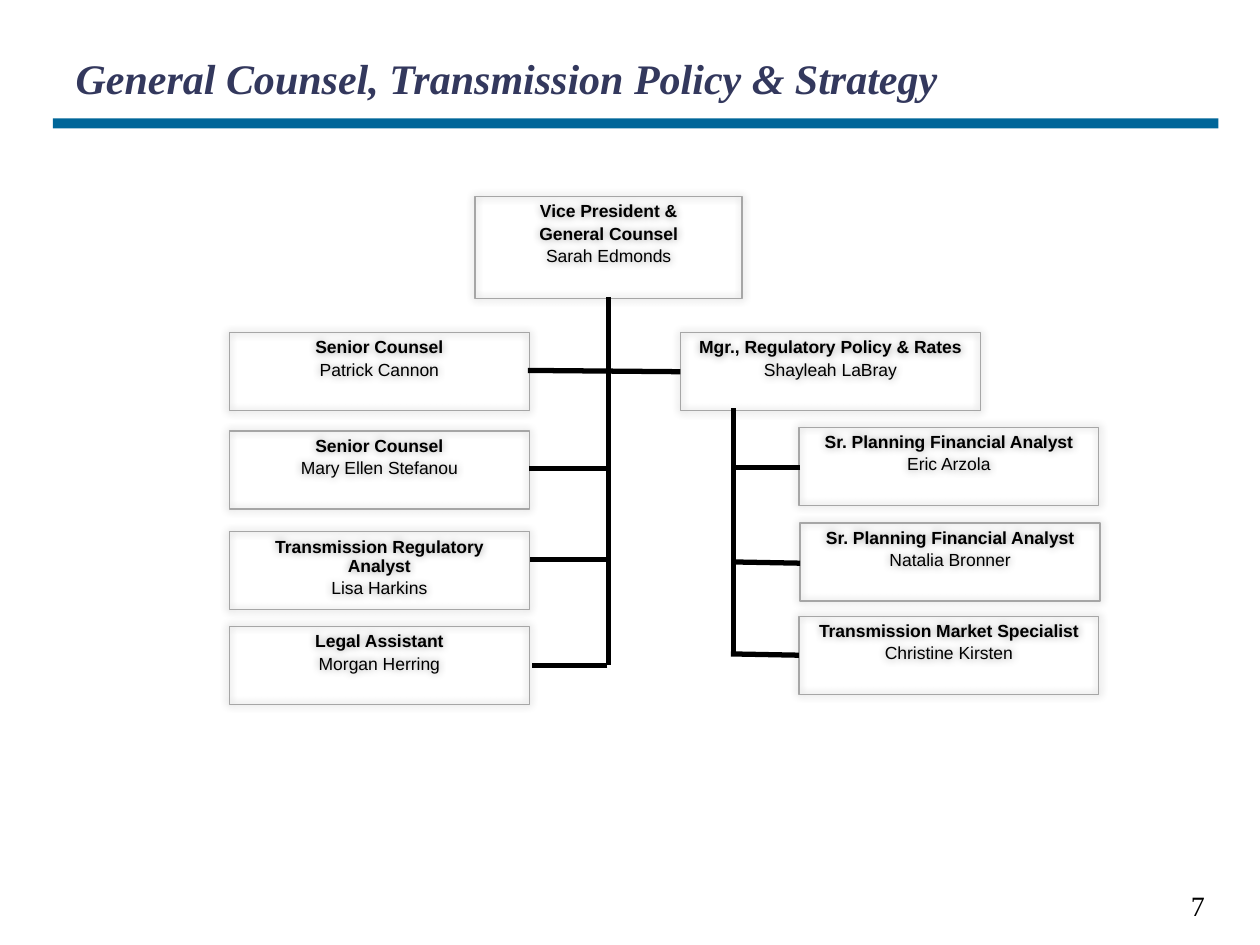
from lxml import etree
from pptx import Presentation
from pptx import util as u
from pptx.dml.color import RGBColor
from pptx.enum import shapes, text
from pptx.oxml import ns

BLACK = RGBColor(0x00, 0x00, 0x00)
NAVY = RGBColor(0x33, 0x38, 0x5D)
TEAL = RGBColor(0x00, 0x66, 0x99)
GREY = RGBColor(0xA6, 0xA6, 0xA6)

BOX_WIDTH = 2.38
BOX_HEIGHT = 0.62

STAFF = [
    (1.82, 2.64, "Senior Counsel", "Patrick Cannon"),
    (1.82, 3.42, "Senior Counsel", "Mary Ellen Stefanou"),
    (1.82, 4.22, "Transmission Regulatory Analyst", "Lisa Harkins"),
    (1.82, 4.97, "Legal Assistant", "Morgan Herring"),
    (5.4, 2.64, "Mgr., Regulatory Policy & Rates", "Shayleah LaBray"),
    (6.34, 3.39, "Sr. Planning Financial Analyst", "Eric Arzola"),
    (6.35, 4.15, "Sr. Planning Financial Analyst", "Natalia Bronner"),
    (6.34, 4.89, "Transmission Market Specialist", "Christine Kirsten"),
]

LINES = [
    (4.83, 2.36, 4.83, 5.28),
    (5.4, 2.95, 4.19, 2.94),
    (4.83, 3.72, 4.2, 3.72),
    (4.83, 4.44, 4.21, 4.44),
    (4.82, 5.28, 4.22, 5.28),
    (5.82, 5.19, 5.82, 3.24),
    (6.35, 3.71, 5.82, 3.71),
    (6.35, 4.47, 5.82, 4.46),
    (6.34, 5.2, 5.8, 5.19),
]


class OrgChart:
    body_font = "Arial"
    title_font = "Times New Roman"

    def __init__(self, slide):
        self.slide = slide

    def style(self, paragraph, name, size, color, bold=False, italic=False):
        font = paragraph.font
        font.name = name
        font.size = u.Pt(size)
        font.color.rgb = color
        font.bold = bold
        font.italic = italic

    def title(self, wording):
        shape = self.slide.shapes.title
        shape.left, shape.top = u.Inches(0.5), u.Inches(0.23)
        shape.width, shape.height = u.Inches(9.42), u.Inches(0.77)
        frame = shape.text_frame
        frame.text = wording
        frame.vertical_anchor = text.MSO_ANCHOR.MIDDLE
        paragraph = frame.paragraphs[0]
        paragraph.alignment = text.PP_ALIGN.LEFT
        self.style(paragraph, self.title_font, 24, NAVY, True, True)

    def rule(self, left, top, width, height):
        shape = self.slide.shapes.add_shape(
            shapes.MSO_SHAPE.RECTANGLE,
            u.Inches(left), u.Inches(top), u.Inches(width), u.Inches(height))
        shape.shadow.inherit = False
        shape.fill.solid()
        shape.fill.fore_color.rgb = TEAL
        shape.line.fill.background()

    def page_number(self, number):
        shape = self.slide.shapes.add_textbox(
            u.Inches(8.58), u.Inches(7), u.Inches(1.08), u.Inches(0.37))
        frame = shape.text_frame
        frame.word_wrap = True
        frame.text = number
        paragraph = frame.paragraphs[0]
        paragraph.alignment = text.PP_ALIGN.RIGHT
        self.style(paragraph, self.title_font, 16, BLACK)

    def glow(self, shape):
        shape.shadow.inherit = False
        effects = shape._element.spPr.find(ns.qn("a:effectLst"))
        shadow = etree.SubElement(
            effects, ns.qn("a:outerShdw"),
            blurRad=str(u.Pt(5)), dist="0", dir="0", rotWithShape="0")
        color = etree.SubElement(shadow, ns.qn("a:srgbClr"), val=str(BLACK))
        etree.SubElement(color, ns.qn("a:alpha"), val="40000")

    def box(self, left, top, *wording, width=BOX_WIDTH, height=BOX_HEIGHT):
        shape = self.slide.shapes.add_shape(
            shapes.MSO_SHAPE.RECTANGLE,
            u.Inches(left), u.Inches(top), u.Inches(width), u.Inches(height))
        shape.fill.background()
        shape.line.color.rgb = GREY
        shape.line.width = u.Pt(0.75)
        self.glow(shape)
        frame = shape.text_frame
        frame.word_wrap = True
        frame.vertical_anchor = text.MSO_ANCHOR.TOP
        frame.text = "\n".join(wording)
        last = len(wording) - 1
        for index, paragraph in enumerate(frame.paragraphs):
            paragraph.alignment = text.PP_ALIGN.CENTER
            paragraph.line_spacing = 0.9
            if index:
                paragraph.space_before = u.Pt(2)
            self.style(paragraph, self.body_font, 10, BLACK, bold=index < last)

    def line(self, *ends):
        connector = self.slide.shapes.add_connector(
            shapes.MSO_CONNECTOR.STRAIGHT, *[u.Inches(end) for end in ends])
        connector.line.color.rgb = BLACK
        connector.line.width = u.Pt(3)
        etree.SubElement(connector._element.spPr, ns.qn("a:effectLst"))


def main():
    presentation = Presentation()
    presentation.slide_width = u.Inches(10)
    presentation.slide_height = u.Inches(7.5)
    slide = presentation.slides.add_slide(presentation.slide_layouts[5])
    chart = OrgChart(slide)
    chart.rule(0.42, 0.94, 9.25, 0.08)
    chart.page_number("7")
    chart.title("General Counsel, Transmission Policy & Strategy")
    chart.box(3.77, 1.56, "Vice President &", "General Counsel",
              "Sarah Edmonds", width=2.12, height=0.81)
    for person in STAFF:
        chart.box(*person)
    for ends in LINES:
        chart.line(*ends)
    presentation.save("out.pptx")


if __name__ == "__main__":
    main()
